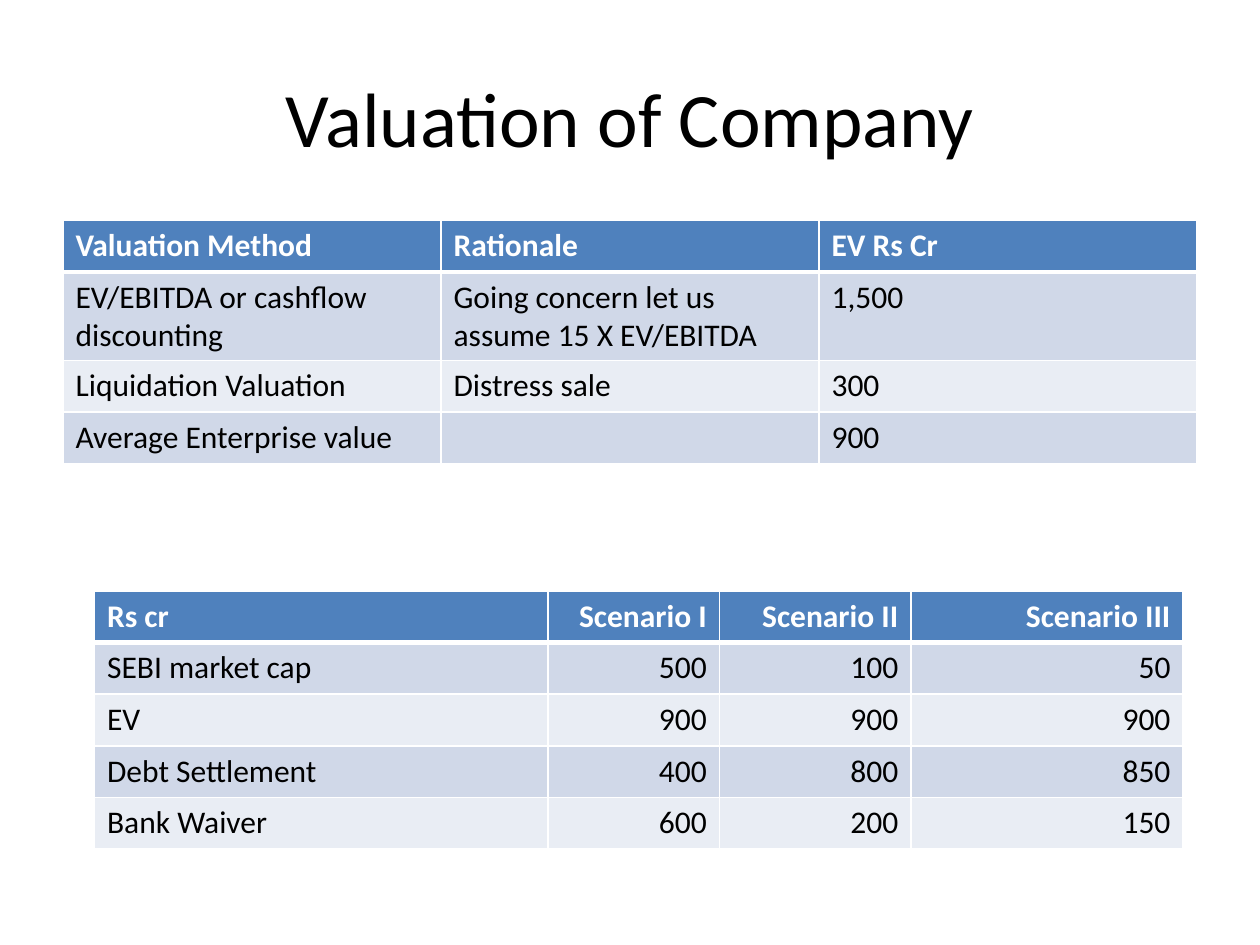
from dataclasses import dataclass

from lxml import etree
from pptx import Presentation
from pptx import util as u
from pptx.dml import color
from pptx.enum import text
from pptx.oxml import ns


@dataclass(frozen=True)
class Theme:
    font: str = "Calibri"
    title: int = 44
    body: int = 18
    ink: str = "000000"
    white: str = "FFFFFF"
    head: str = "4F81BD"
    bands: tuple = ("D0D8E8", "E9EDF4")
    thin: int = 1
    thick: int = 3


THEME = Theme()
ROW = 0.41
LEFT, MID, RIGHT = text.PP_ALIGN.LEFT, text.PP_ALIGN.CENTER, text.PP_ALIGN.RIGHT

METHODS = [
    ("Valuation Method", "Rationale", "EV Rs Cr"),
    ("EV/EBITDA or cashflow discounting",
     "Going concern let us assume 15 X EV/EBITDA", "1,500"),
    ("Liquidation Valuation", "Distress sale", "300"),
    ("Average Enterprise value", "", "900"),
]
CASES = [
    ("Rs cr", "Scenario I", "Scenario II", "Scenario III"),
    ("SEBI market cap", "500", "100", "50"),
    ("EV", "900", "900", "900"),
    ("Debt Settlement", "400", "800", "850"),
    ("Bank Waiver", "600", "200", "150"),
]


def write(frame, words, size, ink, align, bold=False):
    para = frame.paragraphs[0]
    para.alignment = align
    para.font.size = u.Pt(size)
    if words:
        run = para.add_run()
        run.text = words
        run.font.name = THEME.font
        run.font.size = u.Pt(size)
        run.font.bold = bold
        run.font.color.rgb = color.RGBColor.from_string(ink)


def add_title(slide, words):
    box = slide.shapes.add_textbox(
        u.Inches(0.5), u.Inches(0.3), u.Inches(9), u.Inches(1.25))
    frame = box.text_frame
    frame.word_wrap = True
    frame.vertical_anchor = text.MSO_ANCHOR.MIDDLE
    write(frame, words, THEME.title, THEME.ink, MID)


def edge(cell, row):
    """Draw the cell's borders, with a thick rule below the header row."""
    props = cell._tc.get_or_add_tcPr()
    widths = {"L": THEME.thin, "R": THEME.thin,
              "T": THEME.thick if row == 1 else THEME.thin,
              "B": THEME.thick if row == 0 else THEME.thin}
    for side, width in widths.items():
        line = etree.SubElement(props, ns.qn(f"a:ln{side}"), w=str(u.Pt(width)))
        fill = etree.SubElement(line, ns.qn("a:solidFill"))
        etree.SubElement(fill, ns.qn("a:srgbClr"), val=THEME.white)


def add_grid(slide, left, top, cols, rows, align):
    """Add a banded table; align applies to every column after the first."""
    grid = slide.shapes.add_table(
        len(rows), len(cols), u.Inches(left), u.Inches(top),
        u.Inches(sum(cols)), u.Inches(ROW * len(rows))).table
    for col, width in zip(grid.columns, cols):
        col.width = u.Inches(width)
    for r, row in enumerate(rows):
        head = r == 0
        tint = THEME.head if head else THEME.bands[(r - 1) % 2]
        ink = THEME.white if head else THEME.ink
        for c, words in enumerate(row):
            cell = grid.cell(r, c)
            edge(cell, r)
            cell.fill.solid()
            cell.fill.fore_color.rgb = color.RGBColor.from_string(tint)
            write(cell.text_frame, words, THEME.body, ink,
                  align if c else LEFT, head)


def main():
    deck = Presentation()
    deck.slide_width, deck.slide_height = u.Inches(10), u.Inches(7.5)
    slide = deck.slides.add_slide(deck.slide_layouts[6])
    add_title(slide, "Valuation of Company")
    add_grid(slide, 0.5, 1.75, [3] * 3, METHODS, LEFT)
    add_grid(slide, 0.75, 4.69, [3.6, 1.36, 1.52, 2.16], CASES, RIGHT)
    deck.save("out.pptx")


if __name__ == "__main__":
    main()
